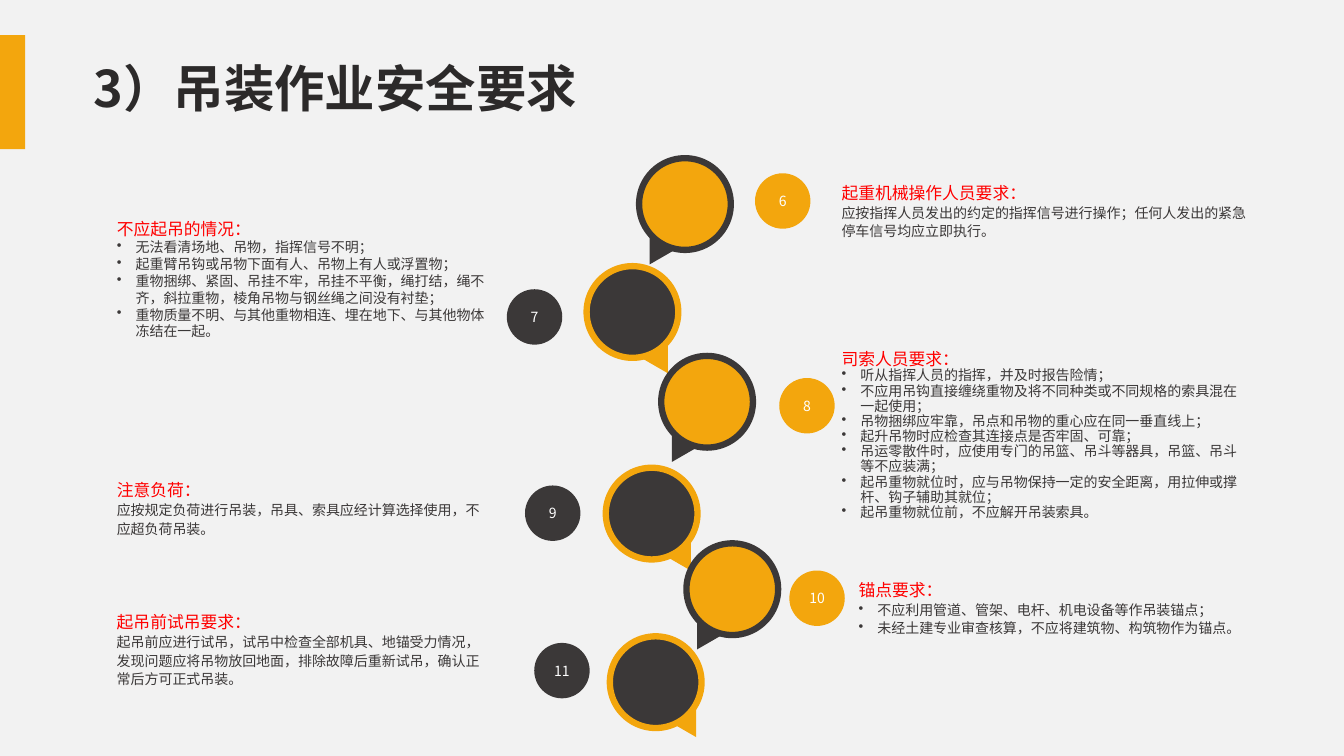
from lxml import etree
from pptx import Presentation
from pptx.dml.color import RGBColor
from pptx.enum.shapes import MSO_SHAPE as Preset
from pptx.enum.text import MSO_ANCHOR as Anchor, PP_ALIGN as Align
from pptx.oxml.ns import qn
from pptx.util import Pt

FONT = "Noto Sans CJK SC"
COLORS = {
    "background": "F2F2F2",
    "orange": "F3A60D",
    "dark": "3B3838",
    "title": "2C2A2A",
    "heading": "FF0000",
    "white": "FFFFFF",
}
BUBBLE, BADGE = 65.5, 39.6
TAIL_WIDTH, TAIL_HEIGHT = 21.6, 18.7
BULLET_INDENT = 13.5

# number, bubble (left, top), tail (left, top), badge (left, top)
STEPS = [
    (6, (456.5, 113), (457.9, 171.4), (539.3, 123.8)),
    (7, (419, 190.1), (461.5, 249.1), (362, 206.6)),
    (8, (472.3, 254.2), (473.8, 312.5), (556.6, 270)),
    (9, (432.7, 334.1), (478.1, 390.2), (375, 346.8)),
    (10, (490.3, 388.1), (491.8, 446.4), (563.8, 407.5)),
    (11, (435.6, 454.5), (481.7, 509), (381.6, 459.2)),
]

# box (left, top, width, height), heading, lines, bulleted, heading spacing, line spacing
NOTES = [
    ((594, 125.3, 306, 80.6), "起重机械操作人员要求：", [
        "应按指挥人员发出的约定的指挥信号进行操作；任何人发出的紧急停车信号均应立即执行。",
    ], False, 1.1, 1.1),
    ((76.3, 151.2, 277.2, 105.8), "不应起吊的情况：", [
        "无法看清场地、吊物，指挥信号不明；",
        "起重臂吊钩或吊物下面有人、吊物上有人或浮置物；",
        "重物捆绑、紧固、吊挂不牢，吊挂不平衡，绳打结，绳不齐，斜拉重物，棱角吊物与钢丝绳之间没有衬垫；",
        "重物质量不明、与其他重物相连、埋在地下、与其他物体冻结在一起。",
    ], True, 1.1, 1.0),
    ((594, 247, 306, 129.6), "司索人员要求：", [
        "听从指挥人员的指挥，并及时报告险情；",
        "不应用吊钩直接缠绕重物及将不同种类或不同规格的索具混在一起使用；",
        "吊物捆绑应牢靠，吊点和吊物的重心应在同一垂直线上；",
        "起升吊物时应检查其连接点是否牢固、可靠；",
        "吊运零散件时，应使用专门的吊篮、吊斗等器具，吊篮、吊斗等不应装满；",
        "起吊重物就位时，应与吊物保持一定的安全距离，用拉伸或撑杆、钩子辅助其就位；",
        "起吊重物就位前，不应解开吊装索具。",
    ], True, 0.9, 0.9),
    ((76.3, 337.7, 277.2, 94.3), "注意负荷：", [
        "应按规定负荷进行吊装，吊具、索具应经计算选择使用，不应超负荷吊装。",
    ], False, 1.1, 1.1),
    ((606.2, 409, 280.8, 94.3), "锚点要求：", [
        "不应利用管道、管架、电杆、机电设备等作吊装锚点；",
        "未经土建专业审查核算，不应将建筑物、构筑物作为锚点。",
    ], True, 1.1, 1.1),
    ((76.3, 432, 280.8, 94.3), "起吊前试吊要求：", [
        "起吊前应进行试吊，试吊中检查全部机具、地锚受力情况，发现问题应将吊物放回地面，排除故障后重新试吊，确认正常后方可正式吊装。",
    ], False, 1.1, 1.1),
]


def rgb(color):
    return RGBColor.from_string(COLORS[color])


def style_paragraph(paragraph, text, size, color, spacing=1.0, bold=False):
    paragraph.text = text
    paragraph.line_spacing = spacing
    font = paragraph.font
    font.name, font.size, font.bold = FONT, Pt(size), bold
    font.color.rgb = rgb(color)
    latin = paragraph._p.pPr.find(".//" + qn("a:latin"))
    east_asian = etree.Element(qn("a:ea"), typeface=FONT)
    latin.addnext(east_asian)


def add_bullet(paragraph):
    properties = paragraph._p.get_or_add_pPr()
    properties.set("marL", str(Pt(BULLET_INDENT)))
    properties.set("indent", str(-Pt(BULLET_INDENT)))
    bullet = etree.Element(qn("a:buChar"), char="•")
    properties.find(qn("a:defRPr")).addprevious(bullet)


def add_filled_shape(slide, preset, left, top, width, height, fill, outline=None):
    shape = slide.shapes.add_shape(preset, Pt(left), Pt(top), Pt(width), Pt(height))
    shape.shadow.inherit = False
    shape.fill.solid()
    shape.fill.fore_color.rgb = rgb(fill)
    if outline:
        shape.line.color.rgb = rgb(outline)
        shape.line.width = Pt(4.5)
    else:
        shape.line.fill.background()
    return shape


def add_step(slide, number, bubble, tail, badge):
    """Add a speech bubble with its tail and the numbered badge beside it."""
    is_even = number % 2 == 0
    fill, outline = ("orange", "dark") if is_even else ("dark", "orange")
    pointer = add_filled_shape(slide, Preset.ISOSCELES_TRIANGLE, *tail,
                               TAIL_WIDTH, TAIL_HEIGHT, outline)
    pointer.rotation = 210 if is_even else 150
    add_filled_shape(slide, Preset.OVAL, *bubble, BUBBLE, BUBBLE, fill, outline)
    label = add_filled_shape(slide, Preset.OVAL, *badge, BADGE, BADGE, fill)
    label.text_frame.vertical_anchor = Anchor.MIDDLE
    paragraph = label.text_frame.paragraphs[0]
    style_paragraph(paragraph, str(number), 10, "white")
    paragraph.alignment = Align.CENTER


def add_text_frame(slide, left, top, width, height):
    box = slide.shapes.add_textbox(Pt(left), Pt(top), Pt(width), Pt(height))
    box.text_frame.word_wrap = True
    return box.text_frame


def add_note(slide, box, heading, lines, bulleted, heading_spacing, line_spacing):
    frame = add_text_frame(slide, *box)
    style_paragraph(frame.paragraphs[0], heading, 12, "heading", heading_spacing)
    for line in lines:
        paragraph = frame.add_paragraph()
        style_paragraph(paragraph, line, 10, "dark", line_spacing)
        if bulleted:
            add_bullet(paragraph)


def add_title(slide, text):
    add_filled_shape(slide, Preset.RECTANGLE, -0.7, 25.2, 18.7, 81.4, "orange")
    frame = add_text_frame(slide, 59.8, 28.1, 630, 73.4)
    frame.vertical_anchor = Anchor.MIDDLE
    style_paragraph(frame.paragraphs[0], text, 36, "title", 0.9, bold=True)


def main():
    presentation = Presentation()
    presentation.slide_width, presentation.slide_height = Pt(960), Pt(540)
    slide = presentation.slides.add_slide(presentation.slide_layouts[6])
    slide.background.fill.solid()
    slide.background.fill.fore_color.rgb = rgb("background")
    add_title(slide, "3）吊装作业安全要求")
    for step in STEPS:
        add_step(slide, *step)
    for note in NOTES:
        add_note(slide, *note)
    presentation.save("out.pptx")


if __name__ == "__main__":
    main()
